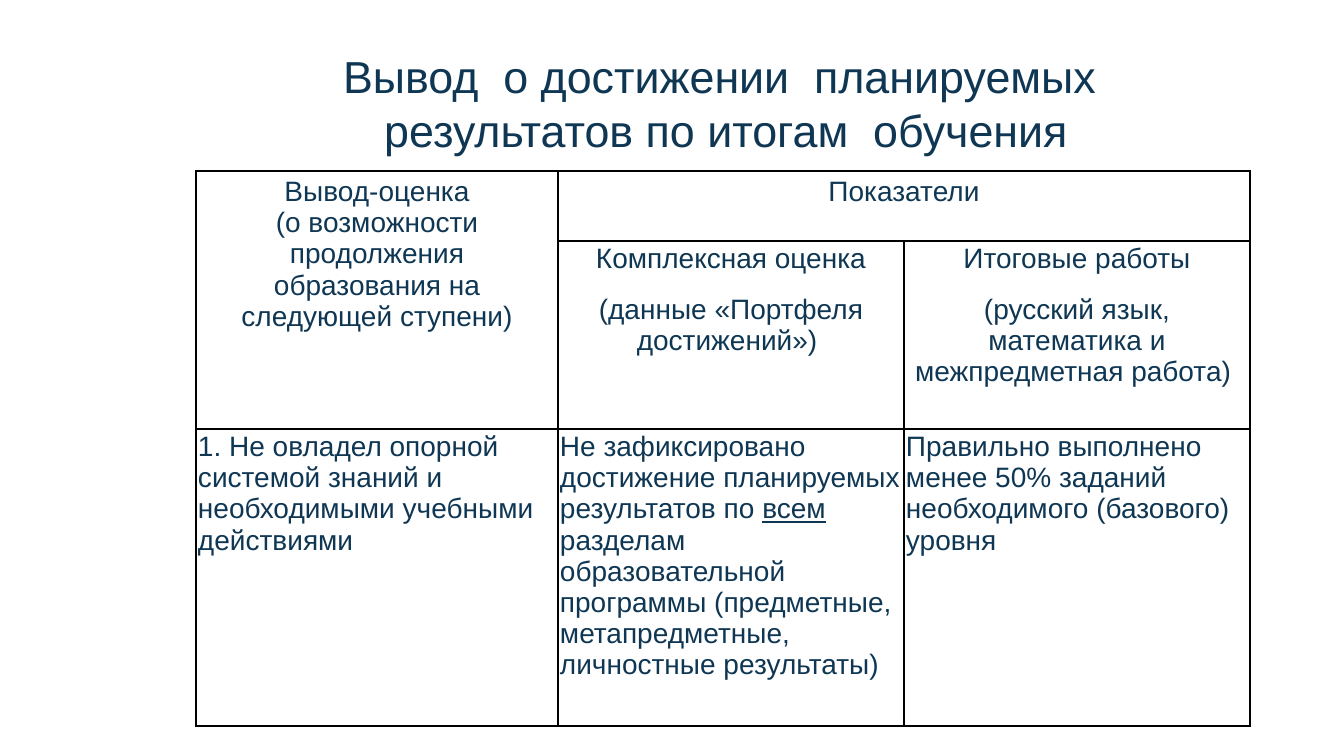
from lxml import etree
from pptx import Presentation
from pptx.dml.color import RGBColor
from pptx.enum.text import MSO_AUTO_SIZE, PP_ALIGN
from pptx.oxml.ns import qn
from pptx.util import Pt

TITLE = "Вывод  о достижении  планируемых  результатов по итогам  обучения"
HEADINGS = [
    (0, 0, 1, 0, ["Вывод-оценка", "(о возможности продолжения образования на следующей ступени)"]),
    (0, 1, 0, 2, ["Показатели"]),
]
DETAILS = [
    (1, 1, ["Комплексная оценка", "(данные «Портфеля достижений») "]),
    (1, 2, ["Итоговые работы", "(русский язык, математика и межпредметная работа) "]),
]
UNDERLINED = "всем"
FINDINGS = [
    ["1. Не овладел опорной системой знаний и необходимыми учебными действиями"],
    ["Не зафиксировано достижение планируемых результатов по ", UNDERLINED,
     " разделам образовательной программы (предметные, метапредметные, личностные результаты)"],
    ["Правильно выполнено менее 50% заданий необходимого (базового) уровня"],
]

PX = 9071
TITLE_BOX = (331, 44, 778, 119)
TABLE_LEFT, TABLE_TOP = 196, 171
COLUMN_WIDTHS = [362, 346, 346]
ROW_HEIGHTS = [70, 188, 297]
TIGHT_INSET = 2
NAVY = RGBColor(0x0F, 0x37, 0x54)
BLACK = RGBColor(0, 0, 0)
FONT = "Arial"
CENTER, LEFT = PP_ALIGN.CENTER, PP_ALIGN.LEFT
GROW = MSO_AUTO_SIZE.SHAPE_TO_FIT_TEXT


def px(length):
    return length * PX


def write(frame, paragraphs, size, align, space_after=0):
    for index, runs in enumerate(paragraphs):
        paragraph = frame.add_paragraph() if index else frame.paragraphs[0]
        paragraph.alignment = align
        paragraph.space_after = Pt(space_after)
        for text in runs:
            run = paragraph.add_run()
            run.text = text
            run.font.name = FONT
            run.font.size = Pt(size)
            run.font.color.rgb = NAVY
            if text == UNDERLINED:
                run.font.underline = True


def tighten(cell):
    cell.margin_left = cell.margin_right = px(TIGHT_INSET)
    cell.margin_top = cell.margin_bottom = px(TIGHT_INSET)


def outline(cell):
    properties = cell._tc.get_or_add_tcPr()
    for side in ("a:lnL", "a:lnR", "a:lnT", "a:lnB"):
        line = etree.SubElement(properties, qn(side), w=str(Pt(1)))
        fill = etree.SubElement(line, qn("a:solidFill"))
        etree.SubElement(fill, qn("a:srgbClr"), val=str(BLACK))
    cell.fill.background()


def main():
    deck = Presentation()
    deck.slide_width, deck.slide_height = px(1344), px(756)
    slide = deck.slides.add_slide(deck.slide_layouts[6])

    title = slide.shapes.add_textbox(*map(px, TITLE_BOX)).text_frame
    title.word_wrap = True
    title.auto_size = GROW
    write(title, [[TITLE]], 32, CENTER)

    conclusions = slide.shapes.add_table(
        len(ROW_HEIGHTS), len(COLUMN_WIDTHS), px(TABLE_LEFT), px(TABLE_TOP),
        px(sum(COLUMN_WIDTHS)), px(sum(ROW_HEIGHTS))).table
    conclusions.first_row = conclusions.horz_banding = False
    for column, width in zip(conclusions.columns, COLUMN_WIDTHS):
        column.width = px(width)
    for row, height in zip(conclusions.rows, ROW_HEIGHTS):
        row.height = px(height)
    for cell in conclusions.iter_cells():
        outline(cell)

    for row, column, last_row, last_column, lines in HEADINGS:
        heading = conclusions.cell(row, column)
        heading.merge(conclusions.cell(last_row, last_column))
        write(heading.text_frame, [[line] for line in lines], 20, CENTER)
    for row, column, lines in DETAILS:
        detail = conclusions.cell(row, column)
        tighten(detail)
        write(detail.text_frame, [[line] for line in lines], 20, CENTER, 14.2)
    for column, runs in enumerate(FINDINGS):
        finding = conclusions.cell(2, column)
        tighten(finding)
        write(finding.text_frame, [runs], 20, LEFT, 14.2)

    deck.save("out.pptx")


if __name__ == "__main__":
    main()
